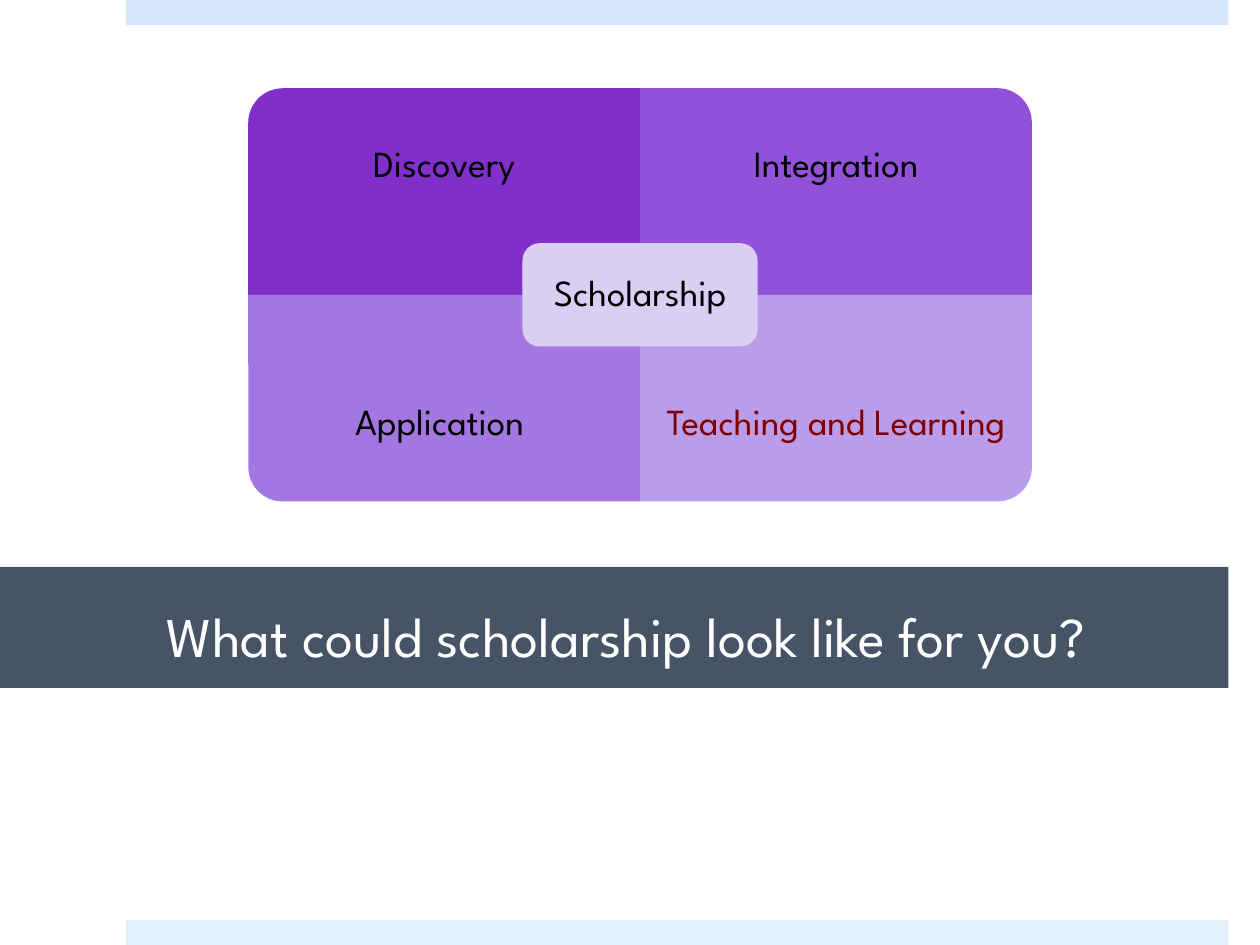
from pptx import Presentation
from pptx import util as u
from pptx.dml.color import RGBColor
from pptx.enum import shapes, text

FONT = "League Spartan"
BLACK = RGBColor(0x00, 0x00, 0x00)
WHITE = RGBColor(0xFF, 0xFF, 0xFF)
MAROON = RGBColor(0x80, 0x00, 0x00)
SLATE = RGBColor(0x46, 0x54, 0x66)
TOP_BLUE = RGBColor(0xD6, 0xE7, 0xFB)
BOTTOM_BLUE = RGBColor(0xE4, 0xEF, 0xFC)
LILAC = RGBColor(0xDB, 0xCE, 0xF3)

# Matrix grid, in inches
LEFT, TOP = 1.97, 0.7
COLUMN, ROW = 3.11, 1.64
LABEL_HEIGHT = ROW * 0.75

# Column, row, rotation of the rounded corner, fill, label, label colour
QUADRANTS = [
    (0, 0, 270, RGBColor(0x80, 0x2F, 0xCB), "Discovery", BLACK),
    (1, 0, 0, RGBColor(0x91, 0x51, 0xD8), "Integration", BLACK),
    (0, 1, 180, RGBColor(0xA4, 0x76, 0xE1), "Application ", BLACK),
    (1, 1, 90, RGBColor(0xBA, 0x9C, 0xEA), "Teaching and Learning", MAROON),
]


def add_block(page, kind, left, top, width, height, fill):
    block = page.shapes.add_shape(
        kind, u.Inches(left), u.Inches(top), u.Inches(width), u.Inches(height))
    block.shadow.inherit = False
    block.fill.solid()
    block.fill.fore_color.rgb = fill
    block.line.fill.background()
    return block


def write(box, words, size, color, insets, anchor):
    """Put one centred line into a shape; insets are left, top, right, bottom."""
    frame = box.text_frame
    frame.word_wrap = True
    frame.vertical_anchor = anchor
    (frame.margin_left, frame.margin_top,
     frame.margin_right, frame.margin_bottom) = map(u.Inches, insets)
    para = frame.paragraphs[0]
    para.alignment = text.PP_ALIGN.CENTER
    span = para.add_run()
    span.text = words
    span.font.name = FONT
    span.font.size = u.Pt(size)
    span.font.color.rgb = color
    return para


def add_label(page, left, top, width, height, words, color, inset):
    box = page.shapes.add_textbox(
        u.Inches(left), u.Inches(top), u.Inches(width), u.Inches(height))
    para = write(box, words, 21, color, [inset] * 4, text.MSO_ANCHOR.MIDDLE)
    para.line_spacing = 0.9


def add_quadrant(page, column, row, rotation, fill, words, color):
    left, top = LEFT + column * COLUMN, TOP + row * ROW
    # A quarter turn swaps the sides around the cell's centre
    width, height = (ROW, COLUMN) if rotation % 180 else (COLUMN, ROW)
    block = add_block(
        page, shapes.MSO_SHAPE.ROUND_1_RECTANGLE,
        left + (COLUMN - width) / 2, top + (ROW - height) / 2,
        width, height, fill)
    block.rotation = rotation
    label_top = top + row * (ROW - LABEL_HEIGHT)
    add_label(page, left, label_top, COLUMN, LABEL_HEIGHT, words, color, 0.16)


def add_center(page, words):
    width, height, gap = COLUMN * 0.6, ROW / 2, 0.04
    left, top = LEFT + COLUMN - width / 2, TOP + ROW - height / 2
    add_block(page, shapes.MSO_SHAPE.ROUNDED_RECTANGLE,
              left, top, width, height, LILAC)
    add_label(page, left + gap, top + gap, width - 2 * gap, height - 2 * gap,
              words, BLACK, 0.09)


def main():
    deck = Presentation()
    deck.slide_width, deck.slide_height = u.Inches(10), u.Inches(7.5)
    page = deck.slides.add_slide(deck.slide_layouts[6])

    rectangle = shapes.MSO_SHAPE.RECTANGLE
    for top, fill in ((0, TOP_BLUE), (7.3, BOTTOM_BLUE)):
        add_block(page, rectangle, 1, top, 8.75, 0.2, fill)
    title = add_block(page, rectangle, 0, 4.5, 9.75, 0.96, SLATE)
    write(title, "What could scholarship look like for you?", 32, WHITE,
          (0.5, 0.15, 0.3, 0.15), text.MSO_ANCHOR.BOTTOM)

    for quadrant in QUADRANTS:
        add_quadrant(page, *quadrant)
    add_center(page, "Scholarship")
    deck.save("out.pptx")


if __name__ == "__main__":
    main()
